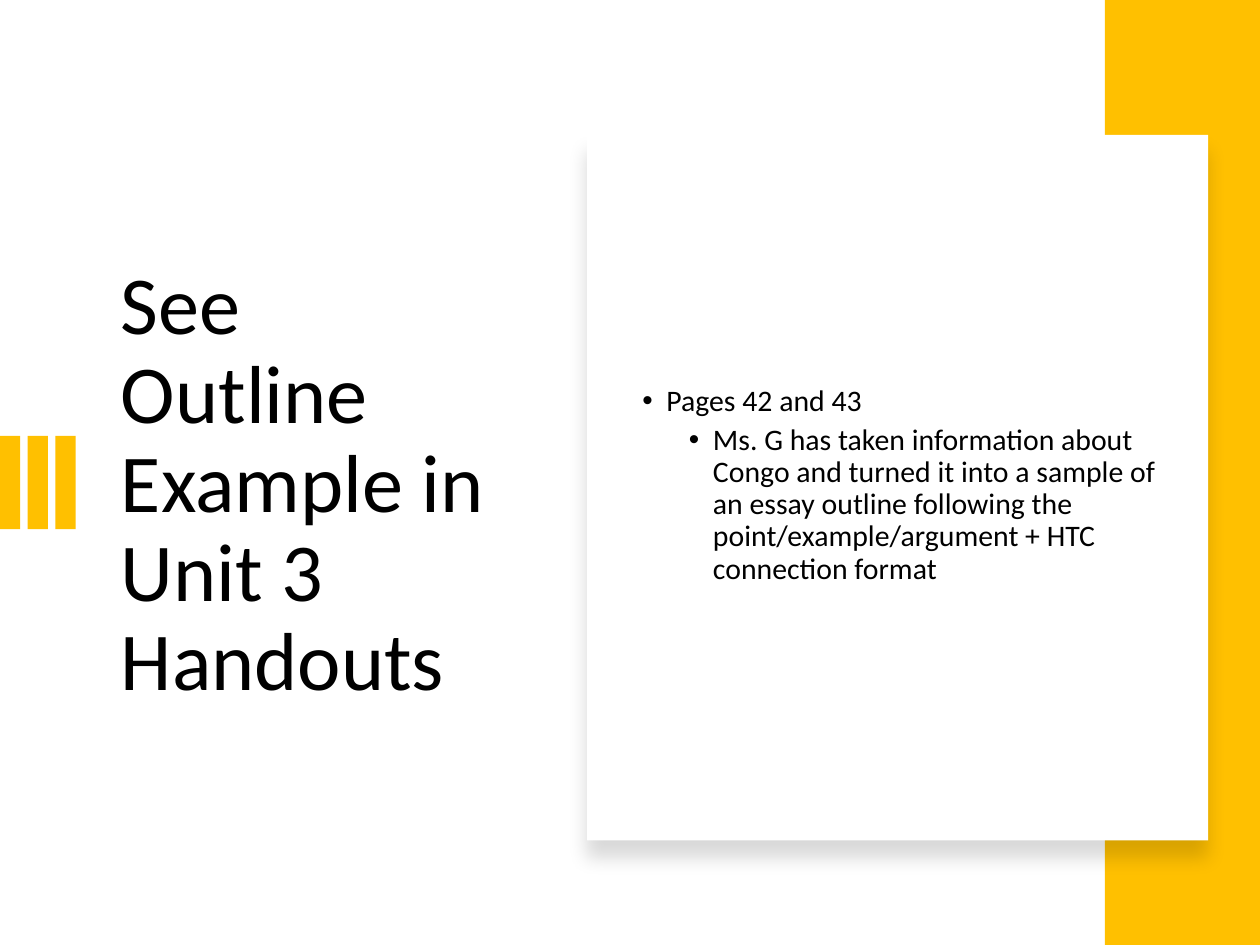
"""Builds the slide that points to the outline example in the Unit 3 handouts."""
from lxml.etree import SubElement
from pptx import Presentation
from pptx.dml.color import RGBColor
from pptx.enum.shapes import MSO_SHAPE
from pptx.enum.text import MSO_ANCHOR, MSO_AUTO_SIZE, PP_ALIGN
from pptx.oxml import parse_xml
from pptx.oxml.ns import nsdecls, qn
from pptx.util import Inches, Pt


def color(hex_value):
    return RGBColor.from_string(hex_value)


def add_block(left, top, width, height, fill):
    block = slide.shapes.add_shape(
        MSO_SHAPE.RECTANGLE, Inches(left), Inches(top), Inches(width), Inches(height))
    block.shadow.inherit = False
    block.fill.solid()
    block.fill.fore_color.rgb = color(fill)
    block.line.fill.background()
    return block


GOLD, WHITE, BLACK = "FFC000", "FFFFFF", "000000"
FRAME = {"word_wrap": True, "auto_size": MSO_AUTO_SIZE.NONE,
         "vertical_anchor": MSO_ANCHOR.MIDDLE}

deck = Presentation()
deck.slide_width, deck.slide_height = Inches(10), Inches(7.5)
slide = deck.slides.add_slide(deck.slide_layouts[5])

heading = slide.shapes.title
heading.left, heading.top = Inches(0.86), Inches(1.46)
heading.width, heading.height = Inches(3.19), Inches(4.79)
heading.text_frame.text = "See Outline Example in Unit 3 Handouts"

for stripe in range(3):
    add_block(0.22 * stripe, 3.46, 0.16, 0.74, GOLD)
add_block(8.77, 0, 1.23, 7.5, GOLD)

card = add_block(4.66, 1.07, 4.93, 5.6, WHITE)
card_effects = card._element.spPr.find(qn("a:effectLst"))
card_effects.append(parse_xml(
    f'<a:outerShdw {nsdecls("a")} blurRad="{Pt(11)}" dist="{Pt(10)}" dir="5400000" '
    f'algn="t" rotWithShape="0"><a:srgbClr val="{BLACK}"><a:alpha val="15000"/>'
    '</a:srgbClr></a:outerShdw>'))

details = slide.shapes.add_textbox(Inches(5), Inches(1.46), Inches(4.32), Inches(4.79))
details.text_frame.text = (
    "Pages 42 and 43\n"
    "Ms. G has taken information about Congo and turned it into a sample of an essay "
    "outline following the point/example/argument + HTC connection format")

for level, (bullet, indent, gap) in enumerate(
        zip(details.text_frame.paragraphs, (0.19, 0.56), (7.5, 3.8))):
    bullet.level = level
    bullet.space_before = Pt(gap)
    bullet_format = bullet._p.get_or_add_pPr()
    bullet_format.set("marL", str(Inches(indent)))
    bullet_format.set("indent", str(Inches(-0.19)))
    SubElement(bullet_format, qn("a:buFont"), typeface="Arial")
    SubElement(bullet_format, qn("a:buChar"), char="•")

for text_part, size in ((heading, 47), (details, 17)):
    for name, value in FRAME.items():
        setattr(text_part.text_frame, name, value)
    for paragraph in text_part.text_frame.paragraphs:
        paragraph.alignment = PP_ALIGN.LEFT
        paragraph.line_spacing = 0.9
        font = paragraph.runs[0].font
        for name, value in {"name": "Calibri", "size": Pt(size)}.items():
            setattr(font, name, value)
        font.color.rgb = color(BLACK)

deck.save("out.pptx")
